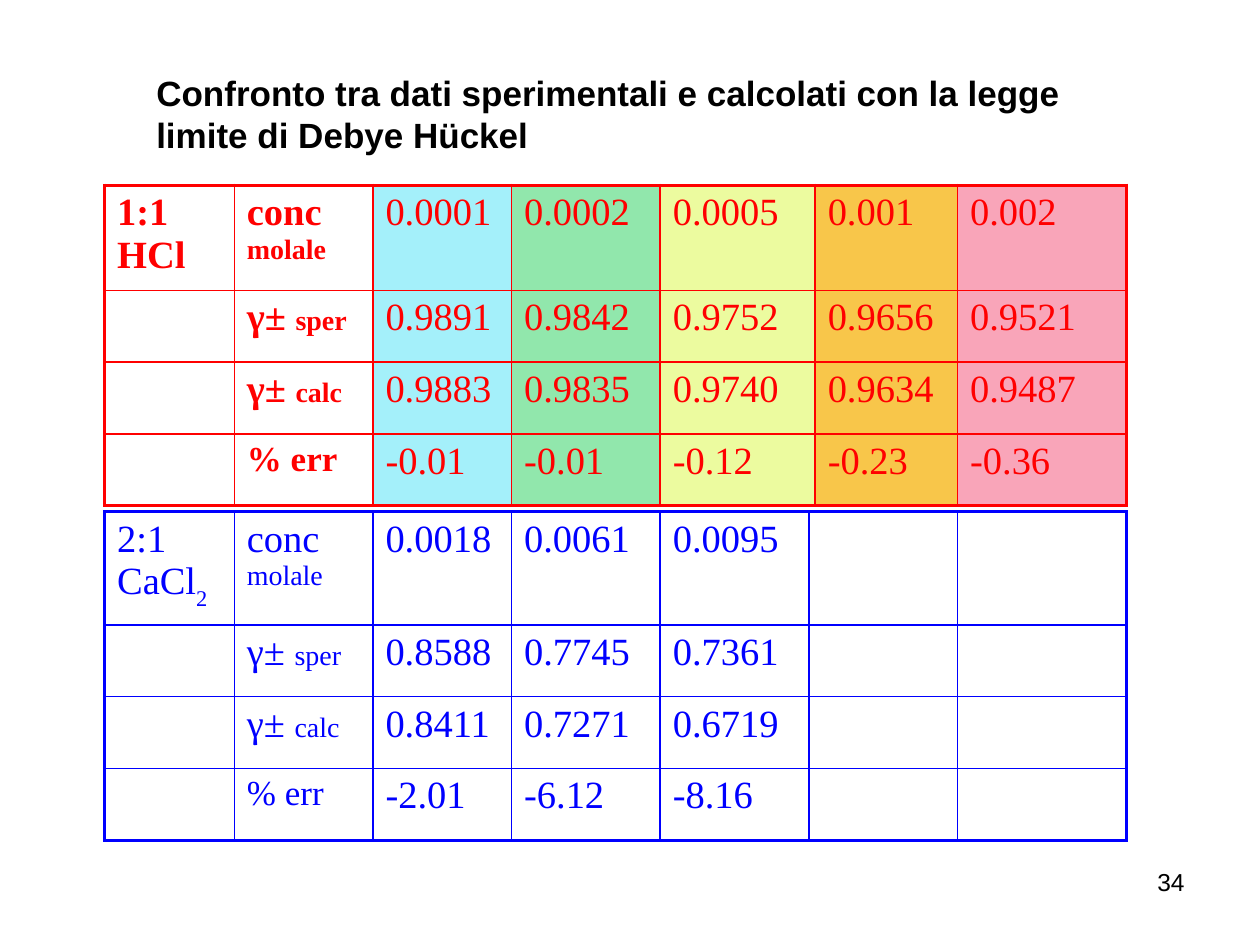
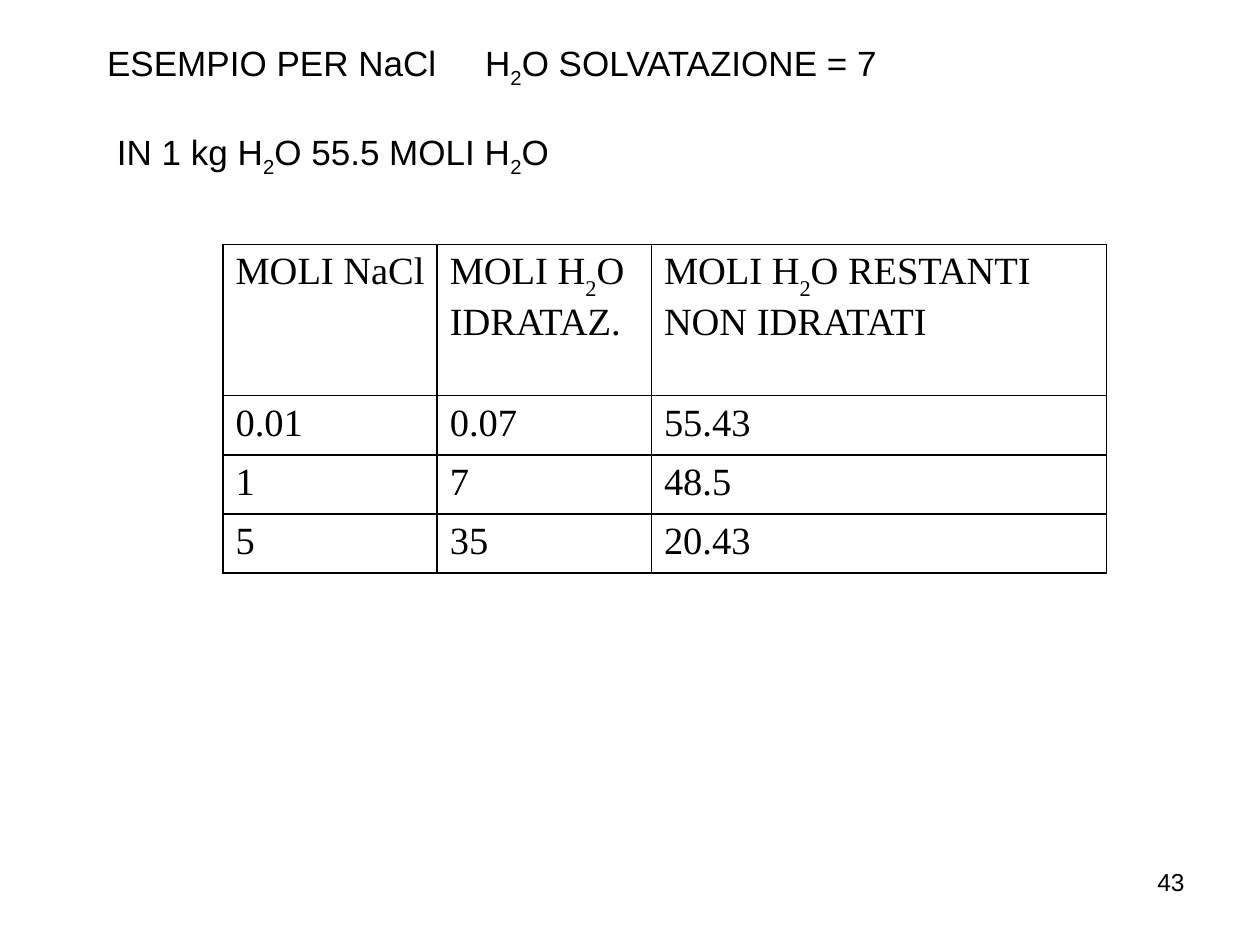
from dataclasses import dataclass

from lxml.etree import SubElement
from pptx import Presentation
from pptx.dml.color import RGBColor
from pptx.enum.text import MSO_ANCHOR, MSO_AUTO_SIZE, PP_ALIGN
from pptx.oxml.ns import qn
from pptx.util import Inches, Pt


@dataclass(frozen=True)
class Theme:
    black: str = "000000"
    red: str = "FF0000"
    blue: str = "0000FF"
    column_fills: tuple = ("A4F0FA", "91E7AC", "ECFB9F", "F8C64A", "F9A5B9")
    text_font: str = "Arial"
    table_font: str = "Times New Roman"
    heading_size: int = 20
    table_size: int = 22
    error_size: int = 20
    small_size: int = 16
    number_size: int = 14
    thin: int = 1
    thick: int = 2


class Deck:
    def __init__(self, theme):
        self.theme = theme
        self.presentation = Presentation()
        self.presentation.slide_width = Inches(10)
        self.presentation.slide_height = Inches(7.5)
        self.slide = None

    def add_slide(self, number):
        layout = self.presentation.slide_layouts.get_by_name("Title Only")
        self.slide = self.presentation.slides.add_slide(layout)
        self.text_box(str(number), 7.17, 6.83, 2.33, 0.52,
                      self.theme.number_size, PP_ALIGN.RIGHT)

    def set_text(self, frame, text, font, size, color, bold=False,
                 alignment=PP_ALIGN.LEFT, tab=None, subscript=-25):
        for index, line in enumerate(text.split("\n")):
            paragraph = frame.paragraphs[0] if index == 0 else frame.add_paragraph()
            paragraph.alignment = alignment
            if tab:
                tabs = SubElement(paragraph._p.get_or_add_pPr(), qn("a:tabLst"))
                SubElement(tabs, qn("a:tab"), pos=str(Inches(tab)), algn="l")
            paragraph.font.name = font
            paragraph.font.size = Pt(size)
            paragraph.font.bold = bold
            paragraph.font.color.rgb = RGBColor.from_string(color)
            for part_index, part in enumerate(line.split("|")):
                for piece_index, piece in enumerate(part.split("~")):
                    if not piece:
                        continue
                    run = paragraph.add_run()
                    run.text = piece
                    if part_index:
                        run.font.size = Pt(self.theme.small_size)
                    if piece_index % 2:
                        properties = run._r.get_or_add_rPr()
                        properties.set("baseline", str(subscript * 1000))

    def title(self, text, left, top, width, height, bold=False, tab=None):
        shape = self.slide.shapes.title
        shape.left, shape.top = Inches(left), Inches(top)
        shape.width, shape.height = Inches(width), Inches(height)
        frame = shape.text_frame
        frame.word_wrap = True
        frame.auto_size = MSO_AUTO_SIZE.NONE
        frame.vertical_anchor = MSO_ANCHOR.TOP
        self.set_text(frame, text, self.theme.text_font, self.theme.heading_size,
                      self.theme.black, bold, tab=tab)

    def text_box(self, text, left, top, width, height, size, alignment=PP_ALIGN.LEFT):
        shape = self.slide.shapes.add_textbox(
            Inches(left), Inches(top), Inches(width), Inches(height))
        shape.text_frame.word_wrap = True
        self.set_text(shape.text_frame, text, self.theme.text_font, size,
                      self.theme.black, alignment=alignment)

    def border(self, cell, sides, color):
        properties = cell._tc.get_or_add_tcPr()
        for side, width in sides.items():
            line = SubElement(properties, qn(f"a:ln{side}"), w=str(Pt(width)))
            fill = SubElement(line, qn("a:solidFill"))
            SubElement(fill, qn("a:srgbClr"), val=color)

    def table(self, rows, left, top, widths, heights, color,
              outline, fills=None, bold_columns=0):
        theme = self.theme
        last_row, last_column = len(heights) - 1, len(widths) - 1
        table = self.slide.shapes.add_table(
            len(heights), len(widths), Inches(left), Inches(top),
            Inches(sum(widths)), Inches(sum(heights))).table
        table.first_row = table.horz_banding = False
        for column, width in zip(table.columns, widths):
            column.width = Inches(width)
        for row, height in zip(table.rows, heights):
            row.height = Inches(height)
        for row_index, row in enumerate(rows):
            for column_index, text in enumerate(row):
                cell = table.cell(row_index, column_index)
                outer_sides = {"L": column_index == 0, "R": column_index == last_column,
                               "T": row_index == 0, "B": row_index == last_row}
                self.border(cell, {side: outline if outer else theme.thin
                                   for side, outer in outer_sides.items()}, color)
                if fills and fills[column_index]:
                    cell.fill.solid()
                    cell.fill.fore_color.rgb = RGBColor.from_string(fills[column_index])
                else:
                    cell.fill.background()
                size = theme.error_size if text == "% err" else theme.table_size
                self.set_text(cell.text_frame, text, theme.table_font, size, color,
                              column_index < bold_columns, subscript=-30)


def activity_rows(salt, *measurements):
    labels = ("conc |molale", "γ± |sper", "γ± |calc", "% err")
    return [(salt if index == 0 else "", label, *values)
            for index, (label, values) in enumerate(zip(labels, measurements))]


def build_comparison(deck):
    theme = deck.theme
    deck.add_slide(34)
    deck.title("Confronto tra dati sperimentali e calcolati con la legge\n"
               "limite di Debye Hückel", 1.14, 0.52, 7.5, 0.77, bold=True)
    heights = (0.83, 0.57, 0.57, 0.57)
    hydrochloric_rows = activity_rows(
        "1:1\nHCl",
        ("0.0001", "0.0002", "0.0005", "0.001", "0.002"),
        ("0.9891", "0.9842", "0.9752", "0.9656", "0.9521"),
        ("0.9883", "0.9835", "0.9740", "0.9634", "0.9487"),
        ("-0.01", "-0.01", "-0.12", "-0.23", "-0.36"))
    deck.table(hydrochloric_rows, 0.83, 1.47,
               (1.03, 1.1, 1.1, 1.18, 1.23, 1.13, 1.34), heights, theme.red,
               theme.thick, (None, None, *theme.column_fills), bold_columns=2)
    calcium_rows = activity_rows(
        "2:1 CaCl~2~",
        ("0.0018", "0.0061", "0.0095", "", ""),
        ("0.8588", "0.7745", "0.7361", "", ""),
        ("0.8411", "0.7271", "0.6719", "", ""),
        ("-2.01", "-6.12", "-8.16", "", ""))
    deck.table(calcium_rows, 0.83, 4.06,
               (1.03, 1.1, 1.1, 1.18, 1.18, 1.18, 1.34), heights, theme.blue,
               theme.thick)


def build_hydration(deck):
    theme = deck.theme
    deck.add_slide(43)
    deck.title("ESEMPIO PER NaCl\tH~2~O SOLVATAZIONE = 7",
               0.75, 0.28, 8.43, 0.43, tab=3)
    deck.text_box("IN 1 kg H~2~O 55.5 MOLI H~2~O", 0.83, 0.99, 7.4, 0.43,
                  theme.heading_size)
    rows = (
        ("MOLI NaCl", "MOLI H~2~O\nIDRATAZ.", "MOLI H~2~O RESTANTI\nNON IDRATATI"),
        ("0.01", "0.07", "55.43"),
        ("1", "7", "48.5"),
        ("5", "35", "20.43"))
    deck.table(rows, 1.77, 1.94, (1.7, 1.7, 3.61), (1.2, 0.47, 0.47, 0.47),
               theme.black, theme.thin)


def main():
    deck = Deck(Theme())
    build_comparison(deck)
    build_hydration(deck)
    deck.presentation.save("out.pptx")


if __name__ == "__main__":
    main()
